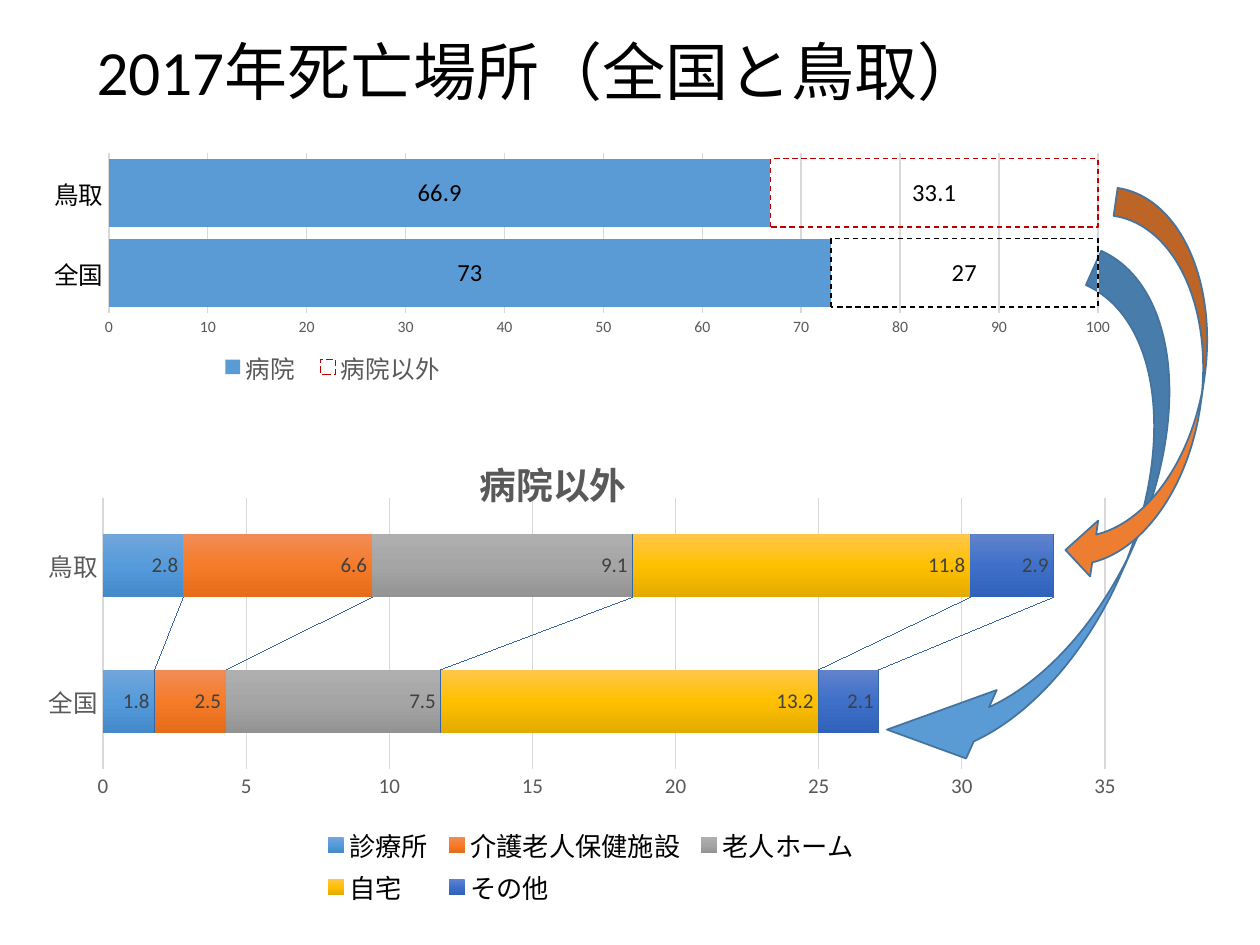
from lxml import etree
from pptx import Presentation, util as u
from pptx.chart.data import CategoryChartData
from pptx.dml.color import RGBColor
from pptx.enum import chart as ch, dml, shapes, text
from pptx.oxml import parse_xml
from pptx.oxml.ns import nsdecls, qn

PX_PER_INCH = 126
FONT = "Calibri"
BLACK = RGBColor(0x00, 0x00, 0x00)
GREY = RGBColor(0x59, 0x59, 0x59)
LABEL = RGBColor(0x40, 0x40, 0x40)
GRID = RGBColor(0xD9, 0xD9, 0xD9)
BLUE = RGBColor(0x5B, 0x9B, 0xD5)
ORANGE = RGBColor(0xED, 0x7D, 0x31)
EDGE = RGBColor(0x43, 0x73, 0x9E)
RED = RGBColor(0xC0, 0x00, 0x00)
LINK = RGBColor(0x2F, 0x5C, 0xB0)

PLACES = ["全国", "鳥取"]
HOSPITAL = {"病院": (73, 66.9), "病院以外": (27, 33.1)}
# Name: values, then the gradient from top to bottom
OUTSIDE = {
    "診療所": ((1.8, 2.8), ("71A6DB", "559BDB", "448ACA")),
    "介護老人保健施設": ((2.5, 6.6), ("F18C57", "F67B28", "E56C19")),
    "老人ホーム": ((7.5, 9.1), ("AFAFAF", "A5A5A5", "939393")),
    "自宅": ((13.2, 11.8), ("FFC64B", "FFC000", "E3AB00")),
    "その他": ((2.1, 2.9), ("6183CB", "3E70CA", "3062BB")),
}


def px(n):
    return u.Emu(round(n * 914400 / PX_PER_INCH))


def set_font(font, size, color, bold=False):
    font.name, font.size, font.bold = FONT, u.Pt(size), bold
    font.color.rgb = color


def write(tf, content, size=18, color=BLACK, bold=False, align=None, spacing=None):
    p = tf.paragraphs[0]
    p.alignment, p.line_spacing = align, spacing
    r = p.add_run()
    r.text = content
    set_font(r.font, size, color, bold)


def set_layout(parent, index, box, area, inner=False):
    """Fix a chart part at area (px, relative to the chart's box)."""
    old = parent.find(qn("c:layout"))
    if old is not None:
        parent.remove(old)
    layout = parse_xml(f"<c:layout {nsdecls('c')}><c:manualLayout/></c:layout>")

    def add(tag, val):
        etree.SubElement(layout[0], qn(f"c:{tag}")).set("val", str(val))

    if inner:
        add("layoutTarget", "inner")
    add("xMode", "edge")
    add("yMode", "edge")
    for tag, n, whole in zip("xywh", area, box[2:] * 2):
        add(tag, round(n / whole, 4))
    parent.insert(index, layout)


def fill_gradient(series, colors):
    series.format.fill.solid()
    stops = "".join(f'<a:gs pos="{i * 50000}"><a:srgbClr val="{c}"/></a:gs>'
                    for i, c in enumerate(colors))
    grad = parse_xml(f"<a:gradFill {nsdecls('a')}><a:gsLst>{stops}</a:gsLst>"
                     '<a:lin ang="5400000" scaled="0"/></a:gradFill>')
    solid = series.format.fill._xPr.find(qn("a:solidFill"))
    solid.getparent().replace(solid, grad)


def bar_chart(s, box, data, gap, plot_area, legend_area, top, step,
              cat_font, val_font, legend_font, label_font, label_pos):
    """Stacked bars; each *_font is a (size, colour) pair."""
    cd = CategoryChartData()
    cd.categories = PLACES
    for name, values in data.items():
        cd.add_series(name, values)
    c = s.shapes.add_chart(ch.XL_CHART_TYPE.BAR_STACKED, *map(px, box), cd).chart
    set_font(c.font, 10, BLACK)
    c.has_title = False
    clear = parse_xml(f"<c:spPr {nsdecls('c', 'a')}><a:noFill/>"
                      "<a:ln><a:noFill/></a:ln></c:spPr>")
    c._chartSpace.find(qn("c:chart")).addnext(clear)

    # Axes
    for axis, font in ((c.category_axis, cat_font), (c.value_axis, val_font)):
        axis.major_tick_mark = axis.minor_tick_mark = ch.XL_TICK_MARK.NONE
        set_font(axis.tick_labels.font, *font)
    c.category_axis.format.line.color.rgb = GRID
    val = c.value_axis
    val.minimum_scale, val.maximum_scale, val.major_unit = 0, top, step
    val.format.line.fill.background()
    val.has_major_gridlines = True
    val.major_gridlines.format.line.color.rgb = GRID
    val.major_gridlines.format.line.width = u.Pt(0.75)

    # Bars and their labels
    plot = c.plots[0]
    plot.gap_width, plot.overlap, plot.vary_by_categories = gap, 100, False
    for series in plot.series:
        labels = series.data_labels
        labels.show_value, labels.position = True, label_pos
        set_font(labels.font, *label_font)

    # Legend and plot area
    c.has_legend = True
    c.legend.position = ch.XL_LEGEND_POSITION.BOTTOM
    c.legend.include_in_layout = False
    set_font(c.legend.font, *legend_font)
    set_layout(c.legend._element, 1, box, legend_area)
    set_layout(c._chartSpace.chart.plotArea, 0, box, plot_area, inner=True)
    return c


def hospital_chart(s, box):
    c = bar_chart(s, box, HOSPITAL, 17, (76, 4, 989, 160), (175, 200, 250, 36),
                  100, 10, (14, BLACK), (9, GREY), (14, GREY), (14, BLACK),
                  ch.XL_LABEL_POSITION.CENTER)
    inside, outside = c.plots[0].series
    inside.format.fill.solid()
    inside.format.fill.fore_color.rgb = BLUE
    for part, color in ((outside, RED), (outside.points[0], BLACK)):
        part.format.fill.background()
        line = part.format.line
        line.color.rgb, line.width = color, u.Pt(0.75)
        line.dash_style = dml.MSO_LINE.DASH


def outside_chart(s, box):
    values = {name: vals for name, (vals, _) in OUTSIDE.items()}
    c = bar_chart(s, box, values, 115, (77, 102, 1002, 271), (290, 426, 550, 88),
                  35, 5, (14, GREY), (12, GREY), (15, BLACK), (12, LABEL),
                  ch.XL_LABEL_POSITION.INSIDE_END)
    for series, (_, colors) in zip(c.plots[0].series, OUTSIDE.values()):
        fill_gradient(series, colors)
    write(c.chart_title.text_frame, "病院以外", size=21, color=GREY, bold=True)
    set_layout(c.chart_title._element, 1, box, (447, 50))
    # Lines that join the two bars
    links = parse_xml(f"<c:serLines {nsdecls('c', 'a')}><c:spPr><a:ln w=\"9525\">"
                      f'<a:solidFill><a:srgbClr val="{LINK}"/></a:solidFill>'
                      "</a:ln></c:spPr></c:serLines>")
    c.plots[0]._element.find(qn("c:overlap")).addnext(links)


def curved_arrow(s, box, rotation, color, head=0.25):
    sp = s.shapes.add_shape(shapes.MSO_SHAPE.CURVED_LEFT_ARROW, *map(px, box))
    sp.rotation = rotation
    sp.adjustments[2] = head
    sp.shadow.inherit = False
    sp.fill.solid()
    sp.fill.fore_color.rgb = color
    sp.line.color.rgb, sp.line.width = EDGE, u.Pt(1)


def slide_title(s, box, content):
    sp = s.shapes.title
    sp.left, sp.top, sp.width, sp.height = map(px, box)
    tf = sp.text_frame
    tf.word_wrap, tf.auto_size = True, text.MSO_AUTO_SIZE.NONE
    tf.vertical_anchor = text.MSO_ANCHOR.MIDDLE
    write(tf, content, size=36, align=text.PP_ALIGN.LEFT, spacing=0.9)


def main():
    prs = Presentation()
    prs.slide_width, prs.slide_height = u.Inches(10), u.Inches(7.5)
    s = prs.slides.add_slide(prs.slide_layouts[5])
    slide_title(s, (84, 25, 994, 100), "2017年死亡場所（全国と鳥取）")
    outside_chart(s, (26, 396, 1113, 514))
    curved_arrow(s, (980, 257, 150, 562), 24.1, BLUE, head=0.56)
    curved_arrow(s, (1089, 194, 113, 394), 8.2, ORANGE)
    hospital_chart(s, (33, 149, 1100, 248))
    prs.save("out.pptx")


if __name__ == "__main__":
    main()
